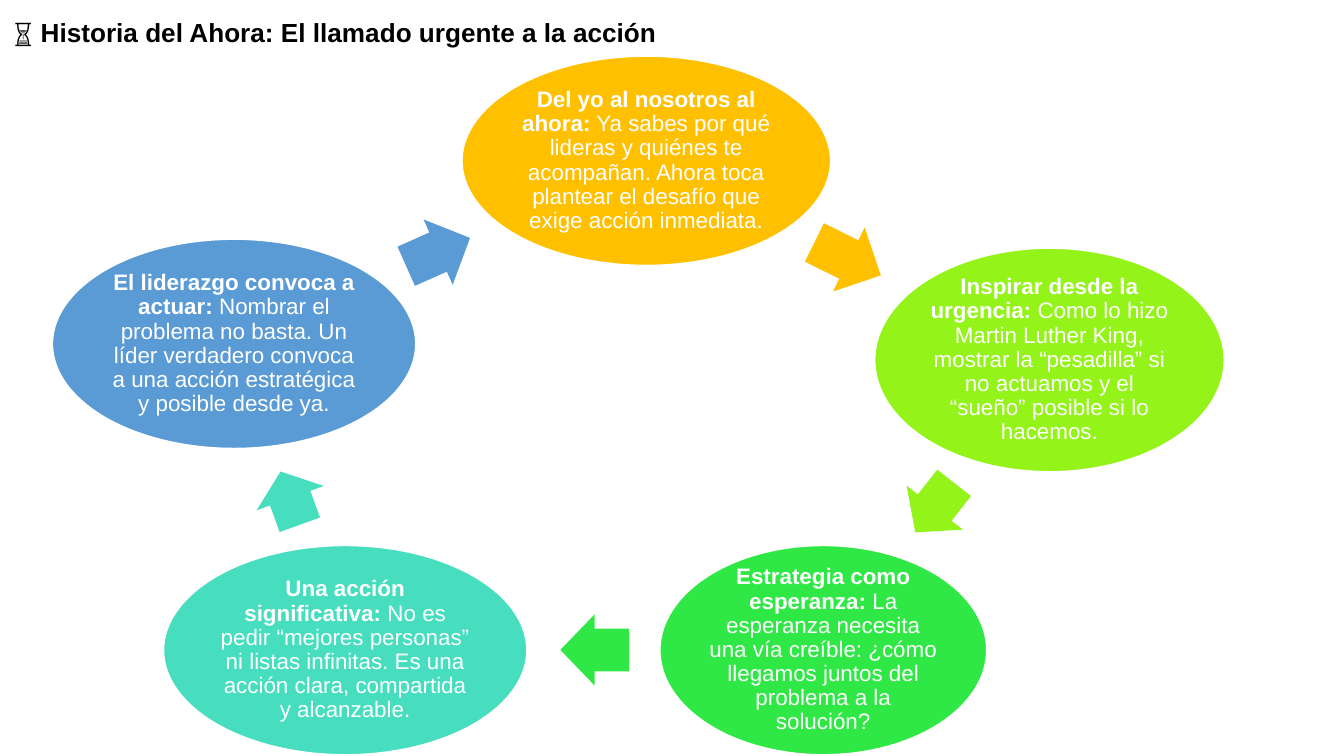
from dataclasses import dataclass

from pptx import Presentation
from pptx.dml.color import RGBColor
from pptx.enum.shapes import MSO_SHAPE
from pptx.enum.text import MSO_ANCHOR, MSO_AUTO_SIZE, PP_ALIGN
from pptx.shapes.autoshape import Shape
from pptx.slide import Slide
from pptx.util import Cm, Pt


@dataclass(frozen=True)
class Theme:
    font: str = "Arial"
    title_size: int = 14
    body_size: int = 12
    black: str = "000000"
    white: str = "FFFFFF"
    amber: str = "FFC000"
    lime: str = "94F319"
    green: str = "30E845"
    turquoise: str = "46DEBF"
    blue: str = "5B9BD5"


@dataclass(frozen=True)
class Box:
    """Position and size in centimetres."""
    left: float
    top: float
    width: float
    height: float

    def lengths(self) -> list[Cm]:
        return [Cm(v) for v in (self.left, self.top, self.width, self.height)]


@dataclass(frozen=True)
class Stage:
    """One step of the cycle and the arrow that leads to the next."""
    heading: str
    body: str
    color: str
    oval: Box
    arrow: Box
    angle: float


THEME = Theme()
ARROW_HEIGHT = 1.35

STAGES = [
    Stage("Del yo al nosotros al ahora:",
          " Ya sabes por qué lideras y quiénes te acompañan. Ahora toca "
          "plantear el desafío que exige acción inmediata.",
          THEME.amber, Box(8.71, 1.04, 7.01, 4),
          Box(15.32, 4.22, 1.4, ARROW_HEIGHT), 26.4),
    Stage("Inspirar desde la urgencia:",
          " Como lo hizo Martin Luther King, mostrar la “pesadilla” si no "
          "actuamos y el “sueño” posible si lo hacemos.",
          THEME.lime, Box(16.51, 4.67, 6.65, 4.27),
          Box(17.07, 8.92, 1.19, ARROW_HEIGHT), 128.1),
    Stage("Estrategia como esperanza:",
          " La esperanza necesita una vía creíble: ¿cómo llegamos juntos del "
          "problema a la solución?",
          THEME.green, Box(12.45, 10.29, 6.22, 4),
          Box(10.59, 11.61, 1.3, ARROW_HEIGHT), 180),
    Stage("Una acción significativa:",
          " No es pedir “mejores personas” ni listas infinitas. Es una acción "
          "clara, compartida y alcanzable.",
          THEME.turquoise, Box(3.07, 10.29, 6.91, 4),
          Box(4.95, 8.74, 1.07, ARROW_HEIGHT), 250.1),
    Stage("El liderazgo convoca a actuar:",
          " Nombrar el problema no basta. Un líder verdadero convoca a una "
          "acción estratégica y posible desde ya.",
          THEME.blue, Box(0.97, 4.5, 6.91, 4),
          Box(7.62, 4.09, 1.32, ARROW_HEIGHT), 336),
]


def set_all(target: object, values: dict[str, object]) -> None:
    for name, value in values.items():
        setattr(target, name, value)


def format_font(font: object, size: int, color: str, bold: bool) -> None:
    set_all(font, {"name": THEME.font, "size": Pt(size), "bold": bold})
    font.color.rgb = RGBColor.from_string(color)


def add_filled(slide: Slide, kind: MSO_SHAPE, box: Box, color: str) -> Shape:
    shape = slide.shapes.add_shape(kind, *box.lengths())
    shape.shadow.inherit = False
    shape.fill.solid()
    shape.fill.fore_color.rgb = RGBColor.from_string(color)
    return shape


def draw_title(slide: Slide, text: str, box: Box) -> None:
    title = slide.shapes.title
    set_all(title, dict(zip(("left", "top", "width", "height"), box.lengths())))
    set_all(title.text_frame, {
        "text": text, "word_wrap": True, "vertical_anchor": MSO_ANCHOR.TOP,
        "auto_size": MSO_AUTO_SIZE.SHAPE_TO_FIT_TEXT})
    heading = title.text_frame.paragraphs[0]
    heading.alignment = PP_ALIGN.LEFT
    format_font(heading.runs[0].font, THEME.title_size, THEME.black, True)


def draw_oval(slide: Slide, stage: Stage) -> None:
    oval = add_filled(slide, MSO_SHAPE.OVAL, stage.oval, stage.color)
    oval.line.color.rgb = RGBColor.from_string(THEME.white)
    oval.line.width = Pt(2)
    inset = Cm(0.04)
    set_all(oval.text_frame, {
        "word_wrap": True, "vertical_anchor": MSO_ANCHOR.MIDDLE,
        "margin_left": inset, "margin_right": inset,
        "margin_top": inset, "margin_bottom": inset})
    paragraph = oval.text_frame.paragraphs[0]
    set_all(paragraph, {"alignment": PP_ALIGN.CENTER, "line_spacing": 0.9})
    for text, bold in ((stage.heading, True), (stage.body, False)):
        run = paragraph.add_run()
        run.text = text
        format_font(run.font, THEME.body_size, THEME.white, bold)


def draw_arrow(slide: Slide, stage: Stage) -> None:
    arrow = add_filled(slide, MSO_SHAPE.RIGHT_ARROW, stage.arrow, stage.color)
    arrow.line.fill.background()
    arrow.adjustments[0] = 0.6
    arrow.adjustments[1] = 0.5
    arrow.rotation = stage.angle


def main() -> None:
    deck = Presentation()
    set_all(deck, {"slide_width": Cm(25.4), "slide_height": Cm(14.29)})
    slide = deck.slides.add_slide(deck.slide_layouts[5])

    # Title
    draw_title(slide, "⏳ Historia del Ahora: El llamado urgente a la acción",
               Box(0, 0.18, 21.08, 0.86))

    # Cycle of stages
    for stage in STAGES:
        draw_oval(slide, stage)
        draw_arrow(slide, stage)

    deck.save("out.pptx")


if __name__ == "__main__":
    main()
